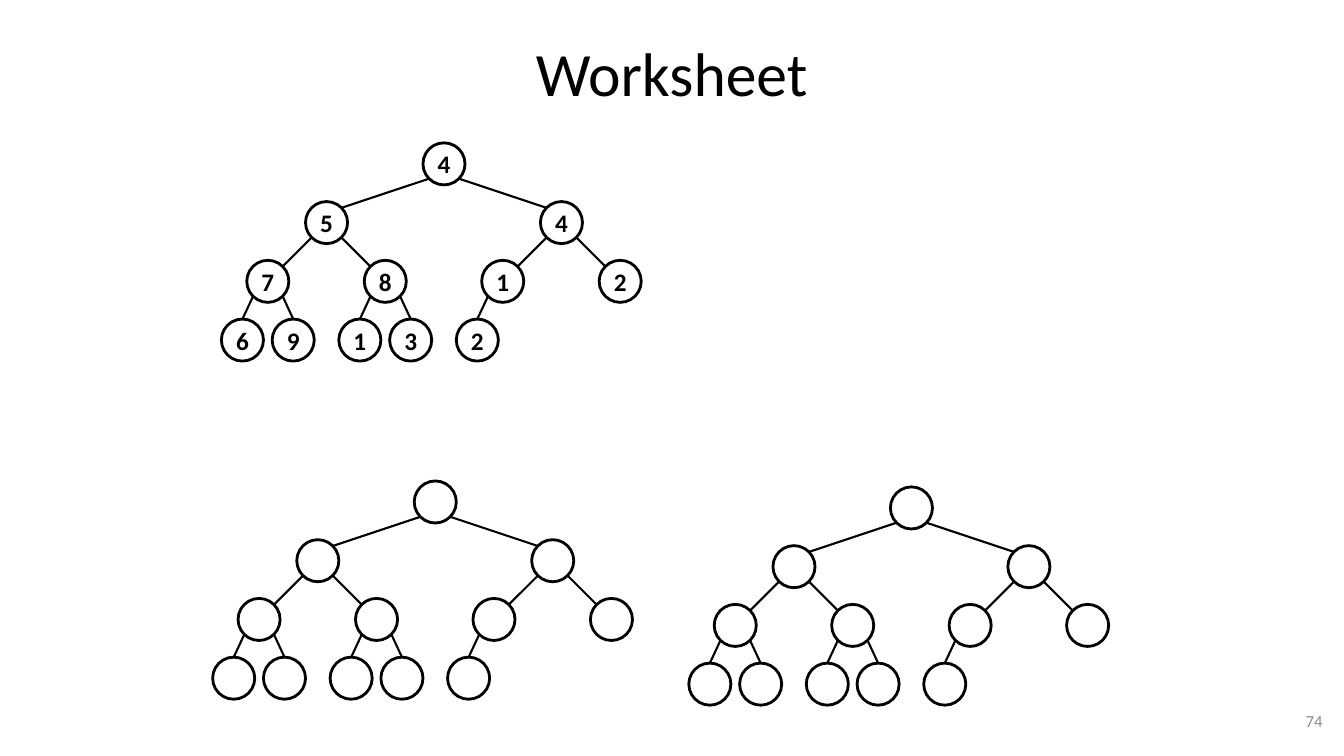
"""Build a worksheet slide with one filled and two blank binary heaps."""
from pptx import Presentation
from pptx.dml.color import RGBColor as Rgb
from pptx.enum.shapes import MSO_CONNECTOR as Link, MSO_SHAPE as Kind
from pptx.enum.text import MSO_ANCHOR as Anchor, PP_ALIGN as Align
from pptx.oxml.ns import qn
from pptx.util import Cm, Pt
from lxml.etree import SubElement

TITLE = "Worksheet"
PAGE = "74"
HEAP = [4, 5, 4, 7, 8, 1, 2, 6, 9, 1, 3, 2]
TREES = [
    (11.19, 4.13, HEAP),
    (10.97, 12.65, [""] * len(HEAP)),
    (22.97, 12.8, [""] * len(HEAP)),
]
COLORS = {"ink": "000000", "page": "8C8C8C"}
FONT = "Calibri"
SIZE = 1.06
STEP = 1.48
SPREAD = [0, 2.96, 1.48, 0.64]
EDGE = 0.37


def write(shape, text, size, color, align, bold=False):
    frame = shape.text_frame
    frame.text = text
    frame.word_wrap = True
    frame.vertical_anchor = Anchor.MIDDLE
    para = frame.paragraphs[0]
    para.alignment = align
    for run in para.runs:
        font = run.font
        font.name, font.size, font.bold = FONT, Pt(size), bold
        font.color.rgb = Rgb.from_string(COLORS[color])


def place(shape, left, top, width, height):
    shape.left, shape.top = Cm(left), Cm(top)
    shape.width, shape.height = Cm(width), Cm(height)


def outline(shape, width):
    shape.line.color.rgb = Rgb.from_string(COLORS["ink"])
    shape.line.width = Pt(width)


def layout(x, y, count):
    spots = [(x, y, 0)]
    for i in range(1, count):
        px, py, level = spots[(i - 1) // 2]
        side = -1 if i % 2 else 1
        spots.append((px + side * SPREAD[level + 1], py + STEP, level + 1))
    return spots


def add_node(group, x, y, value):
    node = group.shapes.add_shape(
        Kind.OVAL, Cm(x - SIZE / 2), Cm(y - SIZE / 2), Cm(SIZE), Cm(SIZE))
    node.shadow.inherit = False
    node.fill.background()
    outline(node, 2)
    frame = node.text_frame
    frame.margin_left = frame.margin_right = 0
    frame.margin_top = frame.margin_bottom = 0
    write(node, str(value), 18, "ink", Align.CENTER, True)


def add_edge(group, parent, child):
    px, py, _ = parent
    cx, cy, level = child
    side = 1 if cx > px else -1
    leaf = level == len(SPREAD) - 1
    end = (cx, cy - SIZE / 2) if leaf else (cx - side * EDGE, cy - EDGE)
    edge = group.shapes.add_connector(
        Link.STRAIGHT, Cm(px + side * EDGE), Cm(py + EDGE), Cm(end[0]), Cm(end[1]))
    outline(edge, 1.5)
    SubElement(edge._element.spPr, qn("a:effectLst"))


def add_tree(slide, x, y, values):
    group = slide.shapes.add_group_shape()
    spots = layout(x, y, len(values))
    for (cx, cy, _), value in zip(spots, values):
        add_node(group, cx, cy, value)
    for i in range(1, len(spots)):
        add_edge(group, spots[(i - 1) // 2], spots[i])


def main():
    deck = Presentation()
    deck.slide_width, deck.slide_height = Cm(33.87), Cm(19.05)
    slide = deck.slides.add_slide(deck.slide_layouts[5])
    title = slide.shapes.title
    place(title, 1.69, 0.21, 30.48, 3.18)
    write(title, TITLE, 44, "ink", Align.CENTER)
    page = slide.shapes.add_textbox(Cm(25.68), Cm(17.66), Cm(7.9), Cm(1.01))
    write(page, PAGE, 12, "page", Align.RIGHT)
    for x, y, values in TREES:
        add_tree(slide, x, y, values)
    deck.save("out.pptx")


if __name__ == "__main__":
    main()
